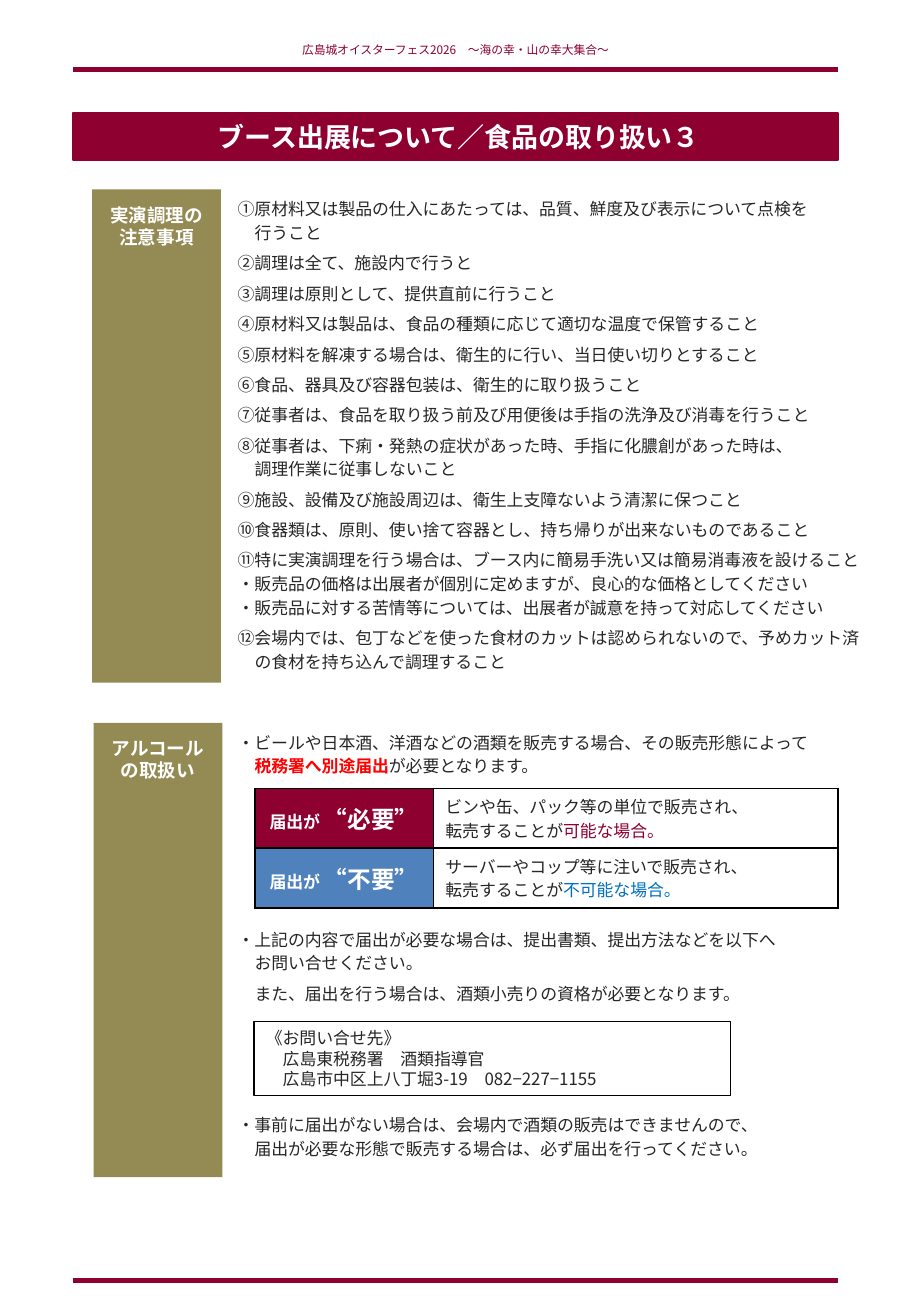
from copy import deepcopy

from pptx import Presentation
from pptx.dml.color import RGBColor
from pptx.enum.shapes import MSO_CONNECTOR, MSO_SHAPE
from pptx.enum.text import MSO_ANCHOR, MSO_AUTO_SIZE, PP_ALIGN
from pptx.oxml.xmlchemy import OxmlElement
from pptx.util import Cm, Pt

CENTER, LEFT = PP_ALIGN.CENTER, PP_ALIGN.LEFT
TOP, MIDDLE = MSO_ANCHOR.TOP, MSO_ANCHOR.MIDDLE
NO_FIT = MSO_AUTO_SIZE.NONE
STRAIGHT, RECTANGLE = MSO_CONNECTOR.STRAIGHT, MSO_SHAPE.RECTANGLE

FONT = "Noto Sans CJK JP"
WINE, OLIVE, BLUE = "8E002F", "948A54", "4F81BD"
INK, WHITE, BLACK, RED, SKY = "262626", "FFFFFF", "000000", "FF0000", "0070C0"
TEXT_LEFT = 4.72
BODY = {"line_spacing": Pt(14), "space_before": Pt(4)}
TIGHT = {"line_spacing": Pt(14), "space_before": Pt(0)}
PLAIN = {"alignment": LEFT, "space_before": Pt(0)}
CENTERED = {"alignment": CENTER, "space_before": Pt(0)}

COOKING_RULES = [
    "①原材料又は製品の仕入にあたっては、品質、鮮度及び表示について点検を\n行うこと",
    "②調理は全て、施設内で行うと",
    "③調理は原則として、提供直前に行うこと",
    "④原材料又は製品は、食品の種類に応じて適切な温度で保管すること",
    "⑤原材料を解凍する場合は、衛生的に行い、当日使い切りとすること",
    "⑥食品、器具及び容器包装は、衛生的に取り扱うこと",
    "⑦従事者は、食品を取り扱う前及び用便後は手指の洗浄及び消毒を行うこと",
    "⑧従事者は、下痢・発熱の症状があった時、手指に化膿創があった時は、\n調理作業に従事しないこと",
    "⑨施設、設備及び施設周辺は、衛生上支障ないよう清潔に保つこと",
    "⑩食器類は、原則、使い捨て容器とし、持ち帰りが出来ないものであること",
    "⑪特に実演調理を行う場合は、ブース内に簡易手洗い又は簡易消毒液を設けること",
    "・販売品の価格は出展者が個別に定めますが、良心的な価格としてください",
    "・販売品に対する苦情等については、出展者が誠意を持って対応してください",
    "⑫会場内では、包丁などを使った食材のカットは認められないので、予めカット済\nの食材を持ち込んで調理すること",
]
ALCOHOL_INTRO = [
    ("・ビールや日本酒、洋酒などの酒類を販売する場合、その販売形態によって\n", {}),
    ("税務署へ別途届出", {"color": RED, "bold": True}),
    ("が必要となります。", {}),
]
FILING_CASES = [
    ("“必要”", WINE, "ビンや缶、パック等の単位で販売され、", "可能な場合。", WINE),
    ("“不要”", BLUE, "サーバーやコップ等に注いで販売され、", "不可能な場合。", SKY),
]
CONTACT = "《お問い合せ先》\n広島東税務署　酒類指導官\n広島市中区上八丁堀3-19　082−227−1155"
FILING_NOTE = "・上記の内容で届出が必要な場合は、提出書類、提出方法などを以下へ\nお問い合せください。"
LICENCE_NOTE = "また、届出を行う場合は、酒類小売りの資格が必要となります。"
CLOSING_NOTE = "・事前に届出がない場合は、会場内で酒類の販売はできませんので、\n届出が必要な形態で販売する場合は、必ず届出を行ってください。"


def rgb(value):
    return RGBColor.from_string(value)


def apply(target, values):
    for name, value in values.items():
        setattr(target, name, value)


def node(parent, tag, **values):
    child = OxmlElement(tag)
    for name, value in values.items():
        child.set(name, str(value))
    parent.append(child)
    return child


class Sheet:
    def __init__(self, page):
        self.page = page
        self.style = {"size": 10, "color": INK, "bold": False}

    def place(self, box, area):
        apply(box, dict(zip(("left", "top", "width", "height"), map(Cm, area))))

    def paint(self, box, fill=None, line=None, weight=1):
        if fill:
            box.fill.solid()
            box.fill.fore_color.rgb = rgb(fill)
        else:
            box.fill.background()
        if line:
            box.line.color.rgb = rgb(line)
            box.line.width = Pt(weight)
        else:
            box.line.fill.background()

    def set_para(self, para, spans, layout, hang=0, margin=0, **style):
        apply(para, layout)
        settings = para._p.get_or_add_pPr()
        settings.set("marL", str(Pt(margin)))
        settings.set("indent", str(Pt(-hang)))
        node(settings, "a:buNone")
        for text, changes in [(spans, {})] if isinstance(spans, str) else spans:
            look = {**self.style, **style, **changes}
            for index, piece in enumerate(text.split("\n")):
                if index:
                    para.add_line_break()
                    para._p[-1].append(deepcopy(span._r.rPr))
                if piece:
                    span = para.add_run()
                    span.text = piece
                    apply(span.font, {"size": Pt(look["size"]), "bold": look["bold"], "name": FONT})
                    span.font.color.rgb = rgb(look["color"])
                    node(span._r.rPr, "a:ea", typeface=FONT)

    def fill_text(self, frame, items, layout=BODY, **style):
        for index, item in enumerate(items):
            para = frame.add_paragraph() if index else frame.paragraphs[0]
            self.set_para(para, item, layout, **style)

    def frame(self, box, anchor=TOP, wrap=True, top=0.13):
        apply(box.text_frame, {"auto_size": NO_FIT, "word_wrap": wrap, "vertical_anchor": anchor,
                               "margin_left": Cm(0.25), "margin_right": Cm(0.25),
                               "margin_top": Cm(top), "margin_bottom": Cm(0.13)})
        return box.text_frame

    def title(self, text, area):
        box = self.page.shapes.title
        self.place(box, area)
        outline = node(box._element.spPr, "a:prstGeom", prst="roundRect")
        node(node(outline, "a:avLst"), "a:gd", name="adj", fmla="val 50000")
        self.paint(box, WINE, WINE)
        frame = self.frame(box, MIDDLE, False)
        frame.margin_left = Cm(0.41)
        self.fill_text(frame, [text], CENTERED, size=16, color=WHITE, bold=True)

    def body(self, items, area):
        box = self.page.placeholders[1]
        self.place(box, area)
        frame = self.frame(box)
        self.fill_text(frame, items, hang=10, margin=10)
        for para in frame.paragraphs:
            if para.text.startswith("・"):
                apply(para, TIGHT)

    def text(self, items, area, layout=BODY, **style):
        box = self.page.shapes.add_textbox(*map(Cm, area))
        self.fill_text(self.frame(box), items, layout, **style)
        return box.text_frame

    def panel(self, text, area, layout, fill=None, line=None, wrap=True, top=0.13, **style):
        box = self.page.shapes.add_shape(RECTANGLE, *map(Cm, area))
        box.shadow.inherit = False
        self.paint(box, fill, line, 0.75)
        self.fill_text(self.frame(box, wrap=wrap, top=top), [text], layout, **style)

    def label(self, text, area):
        self.panel(text, area, CENTERED, fill=OLIVE, wrap=False, top=0.3,
                   size=11, color=WHITE, bold=True)

    def rule(self, top):
        line = self.page.shapes.add_connector(STRAIGHT, Cm(1.52), Cm(top), Cm(17.53), Cm(top))
        line.line.color.rgb = rgb(WINE)
        line.line.width = Pt(3)
        node(line._element.spPr, "a:effectLst")

    def cell(self, cell, spans, layout, fill=None, **style):
        cell.vertical_anchor = MIDDLE
        self.set_para(cell.text_frame.paragraphs[0], spans, layout, **style)
        settings = cell._tc.get_or_add_tcPr()
        for side in "LRTB":
            edge = node(settings, f"a:ln{side}", w=Pt(1))
            node(node(edge, "a:solidFill"), "a:srgbClr", val=BLACK)
        if fill:
            cell.fill.solid()
            cell.fill.fore_color.rgb = rgb(fill)
        else:
            cell.fill.background()

    def filing_table(self, cases, left, top, widths, height):
        area = (left, top, sum(widths), height * len(cases))
        table = self.page.shapes.add_table(len(cases), len(widths), *map(Cm, area)).table
        apply(table, {"first_row": False, "horz_banding": False})
        for column, width in zip(table.columns, widths):
            column.width = Cm(width)
        for row, (need, fill, sale, ending, color) in enumerate(cases):
            self.cell(table.cell(row, 0), [("届出が ", {}), (need, {"size": 14})],
                      CENTERED, fill, color=WHITE, bold=True)
            self.cell(table.cell(row, 1), [(f"{sale}\n転売することが", {}), (ending, {"color": color})],
                      {**TIGHT, "alignment": LEFT})


def main():
    deck = Presentation()
    apply(deck, {"slide_width": Cm(19.05), "slide_height": Cm(27.51)})
    sheet = Sheet(deck.slides.add_slide(deck.slide_layouts[1]))
    sheet.title("ブース出展について／食品の取り扱い３", (1.52, 2.36, 16, 0.99))
    sheet.body(COOKING_RULES, (TEXT_LEFT, 3.96, 13.87, 10.31))
    for top in (1.45, 26.77):
        sheet.rule(top)
    sheet.text(["広島城オイスターフェス2026　～海の幸・山の幸大集合～"],
               (5.97, 0.76, 7.11, 0.56), CENTERED, size=7, color=WINE)
    sheet.label("実演調理の\n注意事項", (1.93, 3.96, 2.69, 10.31))
    sheet.label("アルコール\nの取扱い", (1.96, 15.11, 2.69, 9.5))
    sheet.text([ALCOHOL_INTRO], (TEXT_LEFT, 15.11, 12.8, 1.24), hang=10, margin=10)
    sheet.filing_table(FILING_CASES, 5.33, 16.48, (3.73, 8.46), 1.25)
    notes = sheet.text([FILING_NOTE, LICENCE_NOTE], (TEXT_LEFT, 19.23, 13.44, 1.9), hang=10, margin=10)
    notes.paragraphs[1]._p.pPr.set("indent", "0")
    sheet.panel(CONTACT, (5.31, 21.36, 9.96, 1.55), PLAIN, line=BLACK, hang=10, margin=10)
    sheet.text([CLOSING_NOTE], (TEXT_LEFT, 23.11, 12.8, 1.24), hang=10, margin=10)
    deck.save("out.pptx")


if __name__ == "__main__":
    main()
